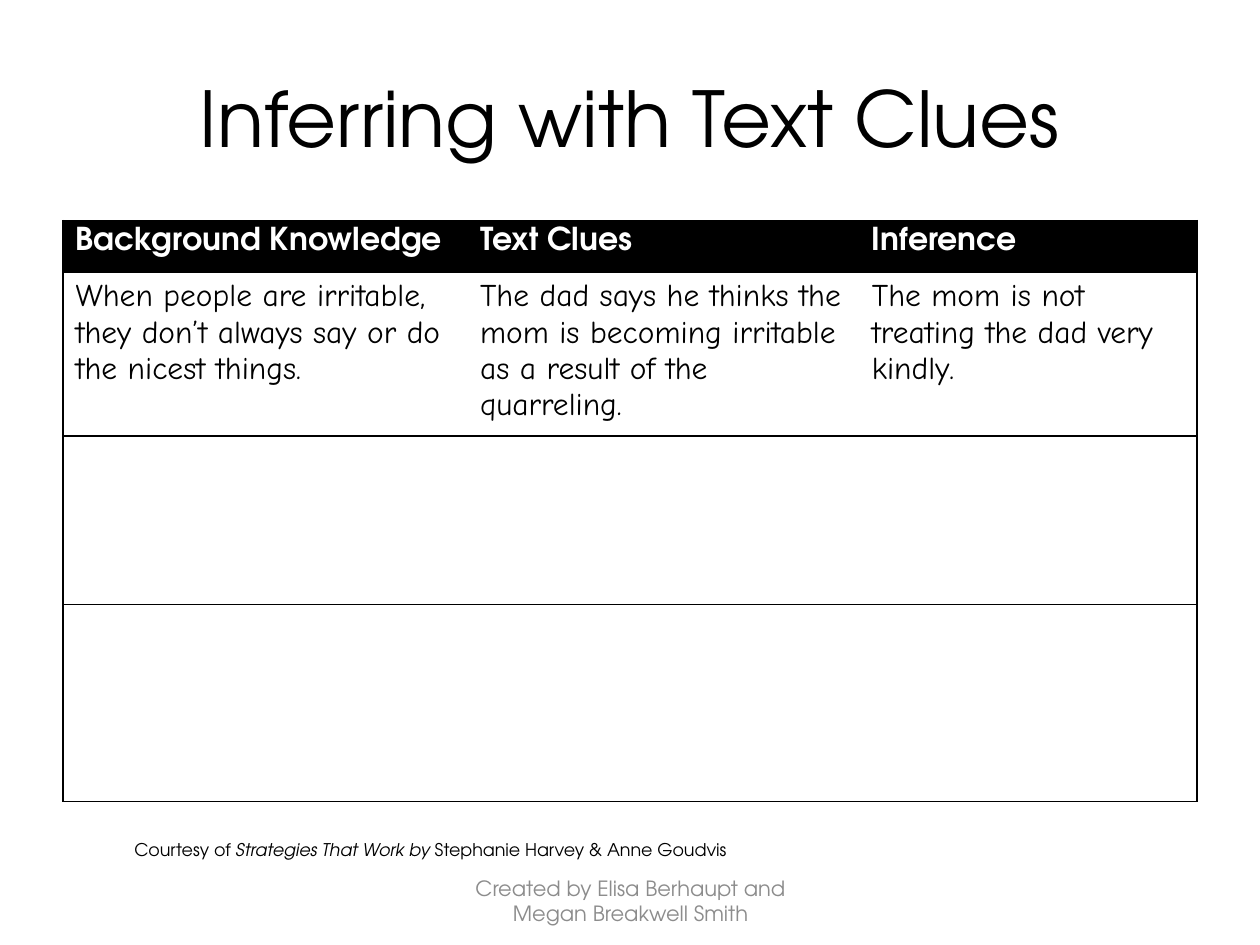
from dataclasses import dataclass

from lxml import etree
from pptx import Presentation
from pptx.dml.color import RGBColor
from pptx.enum import text
from pptx.oxml import ns
from pptx.util import Inches, Pt


@dataclass(frozen=True)
class Theme:
    sans: str = "TeX Gyre Adventor"
    hand: str = "Comic Neue"
    black: str = "000000"
    white: str = "FFFFFF"
    gray: str = "8C8C8C"
    title: int = 44
    body: int = 18
    foot: int = 12
    note: int = 10
    line: float = 0.75


look = Theme()


def add_run(para, words, size, color, face=look.sans, bold=False, slant=False):
    run = para.add_run()
    run.text = words
    font = run.font
    font.name, font.size = face, Pt(size)
    font.bold, font.italic = bold, slant
    font.color.rgb = RGBColor.from_string(color)


def add_box(left, top, width, height, runs, size, color):
    box = slide.shapes.add_textbox(
        Inches(left), Inches(top), Inches(width), Inches(height))
    frame = box.text_frame
    frame.word_wrap = True
    frame.vertical_anchor = text.MSO_ANCHOR.MIDDLE
    para = frame.paragraphs[0]
    para.alignment = text.PP_ALIGN.CENTER
    for words, slant in runs:
        add_run(para, words, size, color, slant=slant)
    return frame


deck = Presentation()
deck.slide_width, deck.slide_height = Inches(10), Inches(7.5)
slide = deck.slides.add_slide(deck.slide_layouts[6])

# Title
add_box(0.5, 0.3, 9, 1.25, [("Inferring with Text Clues", False)],
        look.title, look.black)

# Table
cols = [3.21, 3.11, 2.68]
rows = [0.41, 1.13, 1.34, 1.56]
words = [
    ["Background Knowledge", "Text Clues", "Inference"],
    ["When people are irritable, they don’t always say or do the nicest things.",
     "The dad says he thinks the mom is becoming irritable as a result of the quarreling.",
     "The mom is not treating the dad very kindly."],
]
grid = slide.shapes.add_table(
    len(rows), len(cols), Inches(0.5), Inches(1.75),
    Inches(sum(cols)), Inches(sum(rows))).table
for col, width in zip(grid.columns, cols):
    col.width = Inches(width)
for row, height in zip(grid.rows, rows):
    row.height = Inches(height)

for r in range(len(rows)):
    for c in range(len(cols)):
        cell = grid.cell(r, c)
        # Rules between rows and around the edge, none between columns
        edges = {"L": c == 0, "R": c == len(cols) - 1, "T": True, "B": True}
        props = cell._tc.get_or_add_tcPr()
        for side, shown in edges.items():
            line = etree.SubElement(props, ns.qn(f"a:ln{side}"),
                                    w=str(Pt(look.line)))
            if shown:
                fill = etree.SubElement(line, ns.qn("a:solidFill"))
                etree.SubElement(fill, ns.qn("a:srgbClr"), val=look.black)
            else:
                etree.SubElement(line, ns.qn("a:noFill"))
        # Fill and wording
        head = r == 0
        cell.fill.solid()
        cell.fill.fore_color.rgb = RGBColor.from_string(
            look.black if head else look.white)
        if r < len(words):
            add_run(cell.text_frame.paragraphs[0], words[r][c], look.body,
                    look.white if head else look.black,
                    look.sans if head else look.hand, bold=head)

# Footer
add_box(3.42, 6.95, 3.17, 0.4,
        [("Created by Elisa Berhaupt and Megan Breakwell Smith", False)],
        look.foot, look.gray)

# Source note
note = add_box(0.49, 6.31, 5.85, 1.04,
               [("Courtesy of ", False),
                ("Strategies That Work by ", True),
                ("Stephanie Harvey & Anne Goudvis", False)],
               look.note, look.black)
note.vertical_anchor = text.MSO_ANCHOR.TOP
note.margin_top = Inches(0.35)

deck.save("out.pptx")
